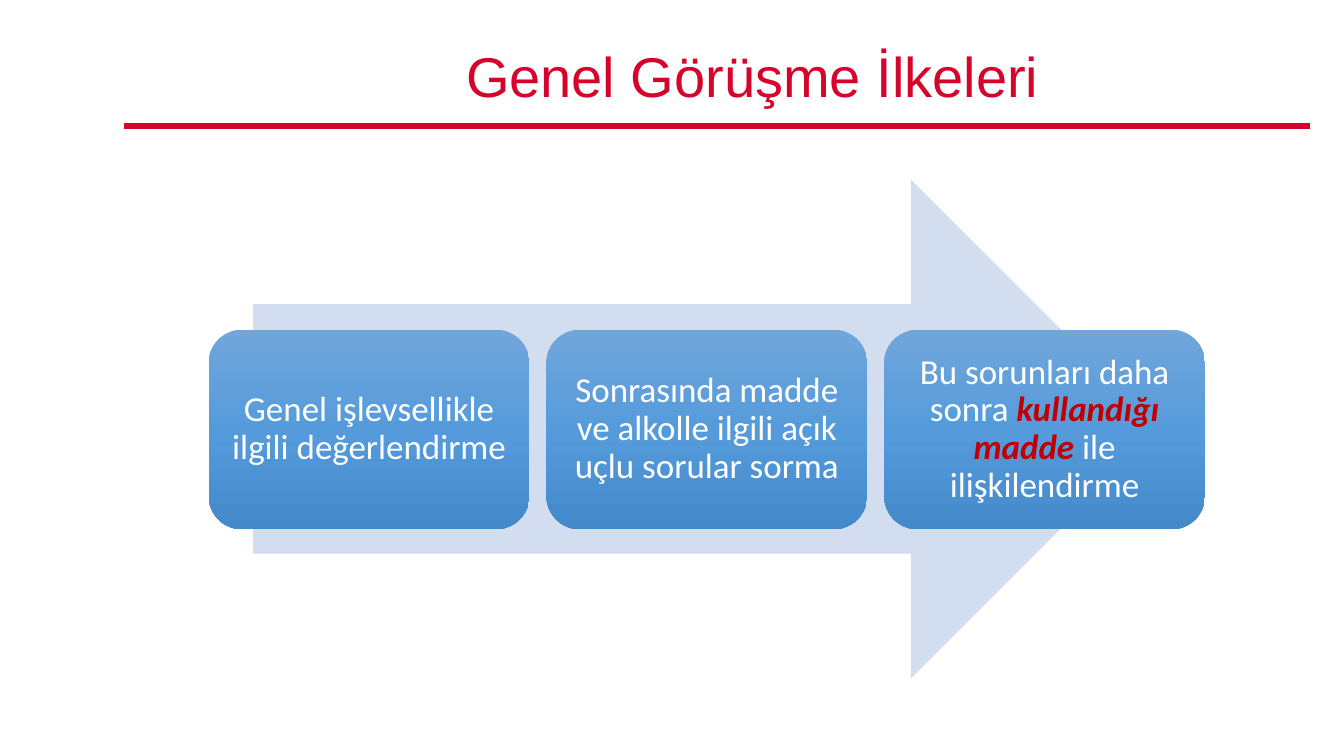
"""Build the slide on general interview principles: three steps along an arrow."""
import copy

import pptx
import pptx.dml.color
import pptx.enum.shapes
import pptx.enum.text
import pptx.oxml
import pptx.oxml.ns
import pptx.util

Inches = pptx.util.Inches
Pt = pptx.util.Pt
RGBColor = pptx.dml.color.RGBColor
MSO_SHAPE = pptx.enum.shapes.MSO_SHAPE
MIDDLE = pptx.enum.text.MSO_ANCHOR.MIDDLE
CENTER = pptx.enum.text.PP_ALIGN.CENTER

RED = RGBColor(0xD5, 0x04, 0x2A)
DARK_RED = RGBColor(0xC0, 0x00, 0x00)
PALE_BLUE = RGBColor(0xD2, 0xDE, 0xEF)
WHITE = RGBColor(0xFF, 0xFF, 0xFF)
STEP_BLUES = [
    (0, RGBColor(0x71, 0xA6, 0xDB)),
    (0.5, RGBColor(0x55, 0x9B, 0xDB)),
    (1, RGBColor(0x44, 0x8A, 0xCA)),
]
STEPS = [
    [("Genel işlevsellikle ilgili değerlendirme", False)],
    [("Sonrasında madde ve alkolle ilgili açık uçlu sorular sorma", False)],
    [
        ("Bu sorunları daha sonra ", False),
        ("kullandığı madde ", True),
        ("ile ilişkilendirme", False),
    ],
]
STEP_LEFT, STEP_PITCH = 2.07, 3.35


def add_run(paragraph, text, font_name, size, color, emphasis=False):
    run = paragraph.add_run()
    run.text = text
    run.font.name = font_name
    run.font.size = Pt(size)
    run.font.color.rgb = color
    run.font.bold = run.font.italic = emphasis


presentation = pptx.Presentation()
presentation.slide_width = Inches(13.33)
presentation.slide_height = Inches(7.5)
slide = presentation.slides.add_slide(presentation.slide_layouts[5])

rule = slide.shapes.add_connector(
    pptx.enum.shapes.MSO_CONNECTOR.STRAIGHT,
    Inches(1.23), Inches(1.25), Inches(12.99), Inches(1.25),
)
rule.line.color.rgb = RED
rule.line.width = Pt(4.5)
rule.element.spPr.append(pptx.oxml.parse_xml(
    f"<a:effectLst {pptx.oxml.ns.nsdecls('a')}/>"))

heading = slide.shapes.title
heading.left, heading.top = Inches(1.71), Inches(0.39)
heading.width, heading.height = Inches(11.5), Inches(0.79)
heading.text_frame.auto_size = pptx.enum.text.MSO_AUTO_SIZE.NONE
heading.text_frame.vertical_anchor = MIDDLE
heading_line = heading.text_frame.paragraphs[0]
heading_line.alignment = CENTER
heading_line.line_spacing = 0.9
add_run(heading_line, "Genel Görüşme İlkeleri", "Arial", 40, RED)

progress = slide.shapes.add_shape(
    MSO_SHAPE.RIGHT_ARROW, Inches(2.51), Inches(1.78), Inches(9), Inches(4.95))
progress.shadow.inherit = False
progress.fill.solid()
progress.fill.fore_color.rgb = PALE_BLUE
progress.line.fill.background()

for index, wording in enumerate(STEPS):
    step = slide.shapes.add_shape(
        MSO_SHAPE.ROUNDED_RECTANGLE,
        Inches(STEP_LEFT + index * STEP_PITCH), Inches(3.27),
        Inches(3.18), Inches(1.98),
    )
    step.shadow.inherit = False
    step.line.fill.background()
    step.fill.gradient()
    step.fill.gradient_angle = 270
    first_stop = step.element.spPr.find(".//" + pptx.oxml.ns.qn("a:gs"))
    first_stop.addnext(copy.deepcopy(first_stop))
    for stop, (position, blue) in zip(step.fill.gradient_stops, STEP_BLUES):
        stop.position = position
        stop.color.rgb = blue

    frame = step.text_frame
    frame.word_wrap = True
    frame.vertical_anchor = MIDDLE
    frame.margin_left = frame.margin_right = Inches(0.1)
    frame.margin_top = frame.margin_bottom = Inches(0.1)
    paragraph = frame.paragraphs[0]
    paragraph.alignment = CENTER
    paragraph.line_spacing = 0.9
    for text, emphasis in wording:
        add_run(paragraph, text, "Calibri", 25,
                DARK_RED if emphasis else WHITE, emphasis)

presentation.save("out.pptx")
